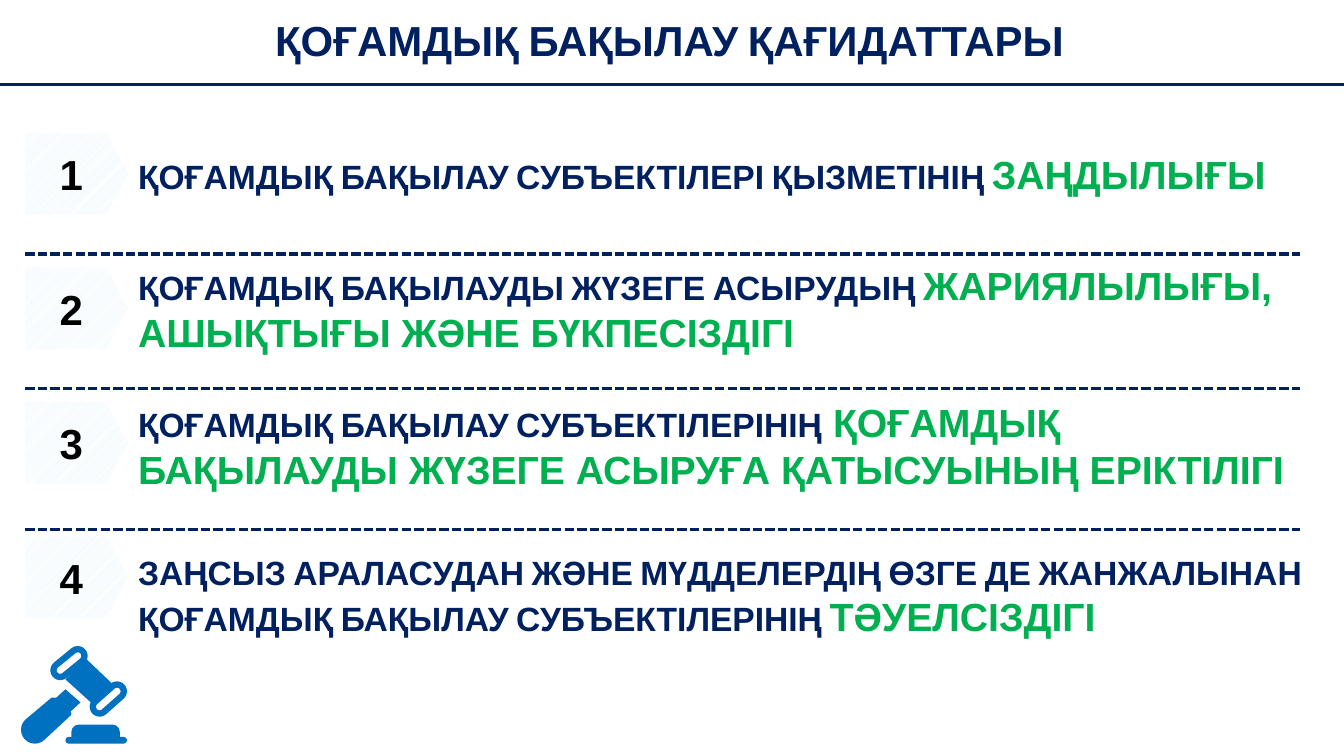
from math import atan2, cos, pi, sin

from lxml.etree import SubElement
from pptx import Presentation
from pptx.dml.color import RGBColor
from pptx.enum.dml import MSO_LINE, MSO_PATTERN
from pptx.enum.shapes import MSO_CONNECTOR, MSO_SHAPE
from pptx.enum.text import MSO_ANCHOR, MSO_AUTO_SIZE, PP_ALIGN
from pptx.oxml.ns import qn
from pptx.util import Cm, Pt

NAVY = RGBColor(0x00, 0x20, 0x60)
GREEN = RGBColor(0x00, 0xB0, 0x50)
BLUE = RGBColor(0x00, 0x70, 0xC0)
ICE = RGBColor(0xD5, 0xF2, 0xFC)
WHITE = RGBColor(0xFF, 0xFF, 0xFF)
BLACK = RGBColor(0x00, 0x00, 0x00)

SLIDE_WIDTH, SLIDE_HEIGHT = 33.87, 19.05
ROW_LEFT, ROW_TOP, ROW_WIDTH, ROW_PITCH = 0.64, 3.35, 32.13, 3.39
BADGE_WIDTH, BADGE_HEIGHT = 2.59, 2.06
STATEMENT_WIDTH = 30.35

PRINCIPLES = [
    ("ҚОҒАМДЫҚ БАҚЫЛАУ СУБЪЕКТІЛЕРІ ҚЫЗМЕТІНІҢ ", "ЗАҢДЫЛЫҒЫ", 0.31, 1.44, 3.05),
    ("ҚОҒАМДЫҚ БАҚЫЛАУДЫ ЖҮЗЕГЕ АСЫРУДЫҢ ",
     "ЖАРИЯЛЫЛЫҒЫ, АШЫҚТЫҒЫ ЖӘНЕ БҮКПЕСІЗДІГІ", -0.29, 2.64, 3.06),
    ("ҚОҒАМДЫҚ БАҚЫЛАУ СУБЪЕКТІЛЕРІНІҢ",
     " ҚОҒАМДЫҚ БАҚЫЛАУДЫ ЖҮЗЕГЕ АСЫРУҒА ҚАТЫСУЫНЫҢ ЕРІКТІЛІГІ", -0.22, 2.64, 3.21),
    ("ЗАҢСЫЗ АРАЛАСУДАН ЖӘНЕ МҮДДЕЛЕРДІҢ ӨЗГЕ ДЕ ЖАНЖАЛЫНАН "
     "ҚОҒАМДЫҚ БАҚЫЛАУ СУБЪЕКТІЛЕРІНІҢ ", "ТӘУЕЛСІЗДІГІ", 0.27, 2.49, None),
]


def set_all(target, formats):
    for name, value in formats.items():
        setattr(target, name, value)


def add_words(paragraph, words, size, color, small_caps=False):
    run = paragraph.add_run()
    run.text = words
    set_all(run.font, {"name": "Arial", "size": Pt(size), "bold": True})
    run.font.color.rgb = color
    if small_caps:
        run.font._element.set("cap", "small")


def add_rule(slide, left, top, width, dash=None):
    rule = slide.shapes.add_connector(
        MSO_CONNECTOR.STRAIGHT, Cm(left), Cm(top), Cm(left + width), Cm(top))
    rule.line.color.rgb = NAVY
    set_all(rule.line, {"width": Pt(2.25), "dash_style": dash})
    SubElement(rule._element.spPr, qn("a:effectLst"))


def add_heading(slide, left, top, width, height):
    heading = slide.shapes.add_textbox(Cm(left), Cm(top), Cm(width), Cm(height))
    frame = heading.text_frame
    set_all(frame, {"word_wrap": True, "vertical_anchor": MSO_ANCHOR.MIDDLE,
                    "margin_left": Cm(0.13)})
    frame.paragraphs[0].alignment = PP_ALIGN.CENTER
    add_words(frame.paragraphs[0], "ҚОҒАМДЫҚ БАҚЫЛАУ ҚАҒИДАТТАРЫ", 30, NAVY, True)
    add_rule(slide, left, top + height + 0.15, width)


def add_badge(slide, left, top, number):
    badge = slide.shapes.add_shape(
        MSO_SHAPE.PENTAGON, Cm(left), Cm(top), Cm(BADGE_WIDTH), Cm(BADGE_HEIGHT))
    badge.adjustments[0] = 0.27
    badge.shadow.inherit = False
    badge.line.fill.background()
    badge.fill.patterned()
    badge.fill.pattern = MSO_PATTERN.DARK_UPWARD_DIAGONAL
    badge.fill.fore_color.rgb = ICE
    badge.fill.back_color.rgb = WHITE
    frame = badge.text_frame
    set_all(frame, {"vertical_anchor": MSO_ANCHOR.MIDDLE,
                    "margin_left": Cm(0.13), "margin_right": Cm(0.13),
                    "margin_top": 0, "margin_bottom": 0})
    frame.paragraphs[0].alignment = PP_ALIGN.CENTER
    add_words(frame.paragraphs[0], str(number), 30, BLACK)


def add_principle(slide, left, top, width, number, principle):
    subject, quality, offset, height, divider = principle
    add_badge(slide, left, top, number)
    statement = slide.shapes.add_textbox(
        Cm(left + BADGE_WIDTH), Cm(top + offset), Cm(STATEMENT_WIDTH), Cm(height))
    set_all(statement.text_frame, {"word_wrap": True,
                                   "auto_size": MSO_AUTO_SIZE.SHAPE_TO_FIT_TEXT})
    paragraph = statement.text_frame.paragraphs[0]
    add_words(paragraph, subject, 24, NAVY, True)
    add_words(paragraph, quality, 28, GREEN)
    if divider:
        add_rule(slide, left, top + divider, width, MSO_LINE.SQUARE_DOT)


def arc(center, radius, start, steps=12):
    angles = [start + pi * step / steps for step in range(steps + 1)]
    return [(center[0] + radius * cos(a), center[1] + radius * sin(a)) for a in angles]


def capsule(first, second, radius):
    start = atan2(second[1] - first[1], second[0] - first[0]) + pi / 2
    return arc(first, radius, start) + arc(second, radius, start + pi)


def paint_blue(part):
    part.shadow.inherit = False
    part.fill.solid()
    part.fill.fore_color.rgb = BLUE
    part.line.fill.background()


def add_outline(slide, left, top, contours):
    placed = [[(Cm(left + x), Cm(top + y)) for x, y in contour] for contour in contours]
    builder = slide.shapes.build_freeform(*placed[0][0])
    builder.add_line_segments(placed[0][1:])
    for contour in placed[1:]:
        builder.move_to(*contour[0])
        builder.add_line_segments(contour[1:])
    paint_blue(builder.convert_to_shape())


def add_gavel(slide, left, top):
    head = [(1.12, 0.84), (1.76, 1.42), (2.29, 0.94), (1.65, 0.33)]
    handle = arc((0.35, 2.11), 0.35, pi / 4) + [
        (0.77, 1.3), (0.89, 1.3), (1.12, 1.09), (1.5, 1.42),
        (1.25, 1.65), (1.27, 1.7), (1.25, 1.75)]
    rims = [((0.99, 0.61), (1.43, 0.25)), ((1.98, 1.53), (2.42, 1.14))]
    add_outline(slide, left, top, [head])
    add_outline(slide, left, top, [handle])
    for ends in rims:
        add_outline(slide, left, top, [capsule(*ends, 0.25), capsule(*ends, 0.09)])
    for preset, x, y, width, height in [
            (MSO_SHAPE.ROUND_2_SAME_RECTANGLE, 1.27, 1.98, 1.22, 0.36),
            (MSO_SHAPE.ROUNDED_RECTANGLE, 1.12, 2.29, 1.55, 0.17)]:
        block = slide.shapes.add_shape(
            preset, Cm(left + x), Cm(top + y), Cm(width), Cm(height))
        block.adjustments[0] = 0.5
        paint_blue(block)


def main():
    deck = Presentation()
    set_all(deck, {"slide_width": Cm(SLIDE_WIDTH), "slide_height": Cm(SLIDE_HEIGHT)})
    slide = deck.slides.add_slide(deck.slide_layouts[6])
    add_heading(slide, 0, 0, SLIDE_WIDTH, 1.98)
    for index, principle in enumerate(PRINCIPLES):
        add_principle(slide, ROW_LEFT, ROW_TOP + index * ROW_PITCH, ROW_WIDTH,
                      index + 1, principle)
    add_gavel(slide, 0.53, 16.28)
    deck.save("out.pptx")


if __name__ == "__main__":
    main()
